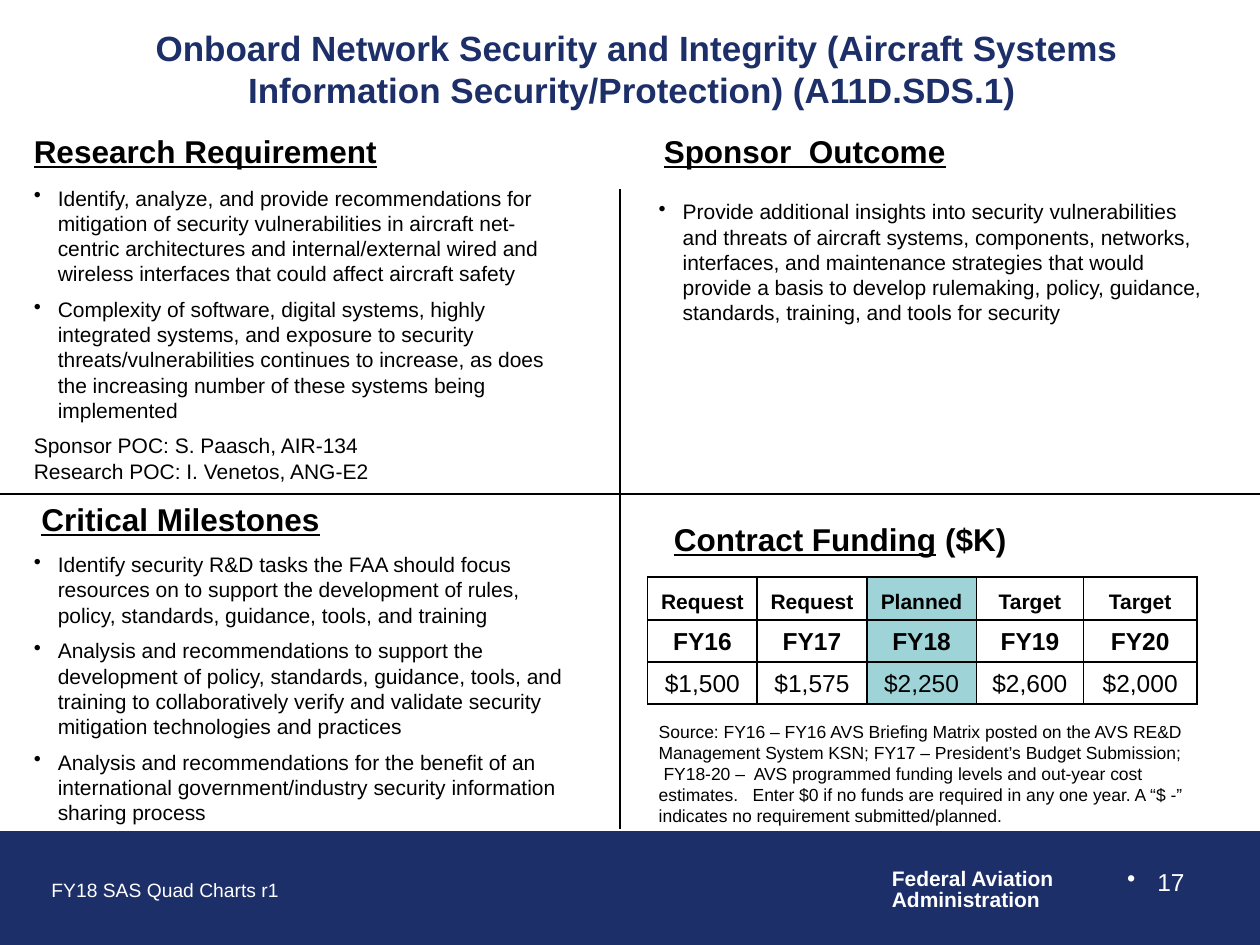
import pptx
import pptx.util
import pptx.dml.color
import pptx.enum.shapes
import pptx.enum.text
import pptx.oxml.ns
from lxml import etree

Inches, Pt = pptx.util.Inches, pptx.util.Pt
ALIGN = pptx.enum.text.PP_ALIGN
ANCHOR = pptx.enum.text.MSO_ANCHOR
NAVY, TEAL, BLACK, WHITE = "1D2F68", "9ED3D7", "000000", "FFFFFF"

# Content
TITLE = ("Onboard Network Security and Integrity (Aircraft Systems "
         "Information Security/Protection) (A11D.SDS.1) ")
HEADS = [  # place, underlined text, plain text
    ((0.17, 1, 5, 0.33), "Research Requirement", ""),
    ((5.17, 1, 4.67, 0.33), "Sponsor  Outcome", ""),
    ((0.23, 3.92, 4.5, 0.38), "Critical Milestones", ""),
    ((5.25, 4.08, 4.42, 0.54), "Contract Funding", " ($K)"),
]
LISTS = [  # place, bullets
    ((0.17, 1.42, 4.42, 2.81), [
        "Identify, analyze, and provide recommendations for mitigation of "
        "security vulnerabilities in aircraft net-centric architectures and "
        "internal/external wired and wireless interfaces that could affect "
        "aircraft safety",
        "Complexity of software, digital systems, highly integrated systems, "
        "and exposure to security threats/vulnerabilities continues to "
        "increase, as does the increasing number of these systems being "
        "implemented"]),
    ((5.13, 1.53, 4.53, 1.11), [
        "Provide additional insights into security vulnerabilities and "
        "threats of aircraft systems, components, networks, interfaces, and "
        "maintenance strategies that would provide a basis to develop "
        "rulemaking, policy, guidance, standards, training, and tools for "
        "security"]),
    ((0.17, 4.33, 4.55, 2.32), [
        "Identify security R&D tasks the FAA should focus resources on to "
        "support the development of rules, policy, standards, guidance, "
        "tools, and training",
        "Analysis and recommendations to support the development of policy, "
        "standards, guidance, tools, and training to collaboratively verify "
        "and validate security mitigation technologies and practices",
        "Analysis and recommendations for the benefit of an international "
        "government/industry security information sharing process"]),
]
POCS = ["Sponsor POC: S. Paasch, AIR-134", "Research POC: I. Venetos, ANG-E2"]
FUNDS = [
    ["Request", "Request", "Planned", "Target", "Target"],
    ["FY16", "FY17", "FY18", "FY19", "FY20"],
    ["$1,500", "$1,575", "$2,250", "$2,600", "$2,000"],
]
COLS = [0.87, 0.87, 0.87, 0.85, 0.9]
ROWS = [  # height, font
    (0.34, {"size": Pt(12), "bold": True}),
    (0.33, {"size": Pt(14), "bold": True}),
    (0.33, {"size": Pt(14), "bold": False}),
]
SOURCE = ("Source: FY16 – FY16 AVS Briefing Matrix posted on the AVS RE&D "
          "Management System KSN; FY17 – President’s Budget Submission;  "
          "FY18-20 –  AVS programmed funding levels and out-year cost "
          "estimates.   Enter $0 if no funds are required in any one year. "
          "A “$ -” indicates no requirement submitted/planned.")
AGENCY = ["Federal Aviation", "Administration"]
RULES = [(4.92, 1.5, 4.92, 6.58), (0, 3.92, 10, 3.92)]

deck = pptx.Presentation()
deck.slide_width, deck.slide_height = Inches(10), Inches(7.5)
slide = deck.slides.add_slide(deck.slide_layouts[6])


def rgb(code):
    return pptx.dml.color.RGBColor.from_string(code)


def style(font, look, ink=BLACK):
    for key, value in {"name": "Arial", **look}.items():
        setattr(font, key, value)
    font.color.rgb = rgb(ink)


def frame(place, wrap=True):
    text = slide.shapes.add_textbox(*map(Inches, place)).text_frame
    text.word_wrap = wrap
    return text


def bullet(para, step):
    props = para._p.get_or_add_pPr()
    props.set("marL", str(Inches(step)))
    props.set("indent", str(-Inches(step)))
    etree.SubElement(props, pptx.oxml.ns.qn("a:buChar")).set("char", "•")


def write(text, lines, look, ink=BLACK, step=0, **form):
    """Add one paragraph per line, reusing the empty first one."""
    for line in lines:
        fresh = not text.paragraphs[0].runs
        para = text.paragraphs[0] if fresh else text.add_paragraph()
        if step:
            bullet(para, step)
        for key, value in form.items():
            if not (fresh and key == "space_before"):
                setattr(para, key, value)
        run = para.add_run()
        run.text = line
        style(run.font, look, ink)


def edge(cell):
    props = cell._tc.get_or_add_tcPr()
    for i, side in enumerate(("lnL", "lnR", "lnT", "lnB")):
        line = etree.Element(pptx.oxml.ns.qn("a:" + side), w=str(Pt(1)))
        fill = etree.SubElement(line, pptx.oxml.ns.qn("a:solidFill"))
        etree.SubElement(fill, pptx.oxml.ns.qn("a:srgbClr"), val=BLACK)
        props.insert(i, line)


# Footer band
band = slide.shapes.add_shape(pptx.enum.shapes.MSO_SHAPE.RECTANGLE,
                              *map(Inches, (0, 6.6, 10, 0.9)))
band.shadow.inherit = False
band.fill.solid()
band.fill.fore_color.rgb = band.line.color.rgb = rgb(NAVY)
band.line.width = Pt(0.75)
write(frame((6.98, 6.85, 1.5, 0.44), False), AGENCY,
      {"size": Pt(12), "bold": True}, WHITE, line_spacing=0.85)
write(frame((0.31, 6.92, 2.02, 0.29), False), ["FY18 SAS Quad Charts r1"],
      {"size": Pt(11)}, WHITE)
write(frame((7.17, 6.83, 2.33, 0.52)), ["17"], {"size": Pt(14)}, WHITE,
      step=0.24, alignment=ALIGN.RIGHT)

# Title and quadrant headings
title = frame((0.42, 0.13, 9.27, 0.83))
title.vertical_anchor = ANCHOR.MIDDLE
write(title, [TITLE], {"size": Pt(20), "bold": True}, NAVY,
      alignment=ALIGN.CENTER)
for place, under, plain in HEADS:
    look = {"size": Pt(18), "bold": True}
    head = frame(place)
    write(head, [under], {**look, "underline": True})
    if plain:
        run = head.paragraphs[0].add_run()
        run.text = plain
        style(run.font, look)

# Quadrant rules
for ends in RULES:
    rule = slide.shapes.add_connector(
        pptx.enum.shapes.MSO_CONNECTOR.STRAIGHT, *map(Inches, ends))
    rule.line.color.rgb = rgb(BLACK)
    rule.line.width = Pt(0.75)
    etree.SubElement(rule._element.spPr, pptx.oxml.ns.qn("a:effectLst"))

# Quadrant text
body = {"size": Pt(12)}
texts = [frame(place) for place, _ in LISTS]
for text, (_, lines) in zip(texts, LISTS):
    write(text, lines, body, step=0.19, space_before=Pt(6))
write(texts[0], POCS[:1], body, space_before=Pt(6))
write(texts[0], POCS[1:], body)
write(frame((5.13, 5.67, 4.37, 1.19)), [SOURCE], {"size": Pt(10)})

# Funding table
high = sum(tall for tall, _ in ROWS)
table = slide.shapes.add_table(len(ROWS), len(COLS), *map(
    Inches, (5.14, 4.58, sum(COLS), high))).table
for col, wide in zip(table.columns, COLS):
    col.width = Inches(wide)
for r, (tall, look) in enumerate(ROWS):
    table.rows[r].height = Inches(tall)
    for c, value in enumerate(FUNDS[r]):
        cell = table.cell(r, c)
        cell.vertical_anchor = ANCHOR.BOTTOM
        cell.fill.solid()
        cell.fill.fore_color.rgb = rgb(TEAL if c == 2 else WHITE)
        edge(cell)
        write(cell.text_frame, [value], look, alignment=ALIGN.CENTER)

deck.save("out.pptx")
